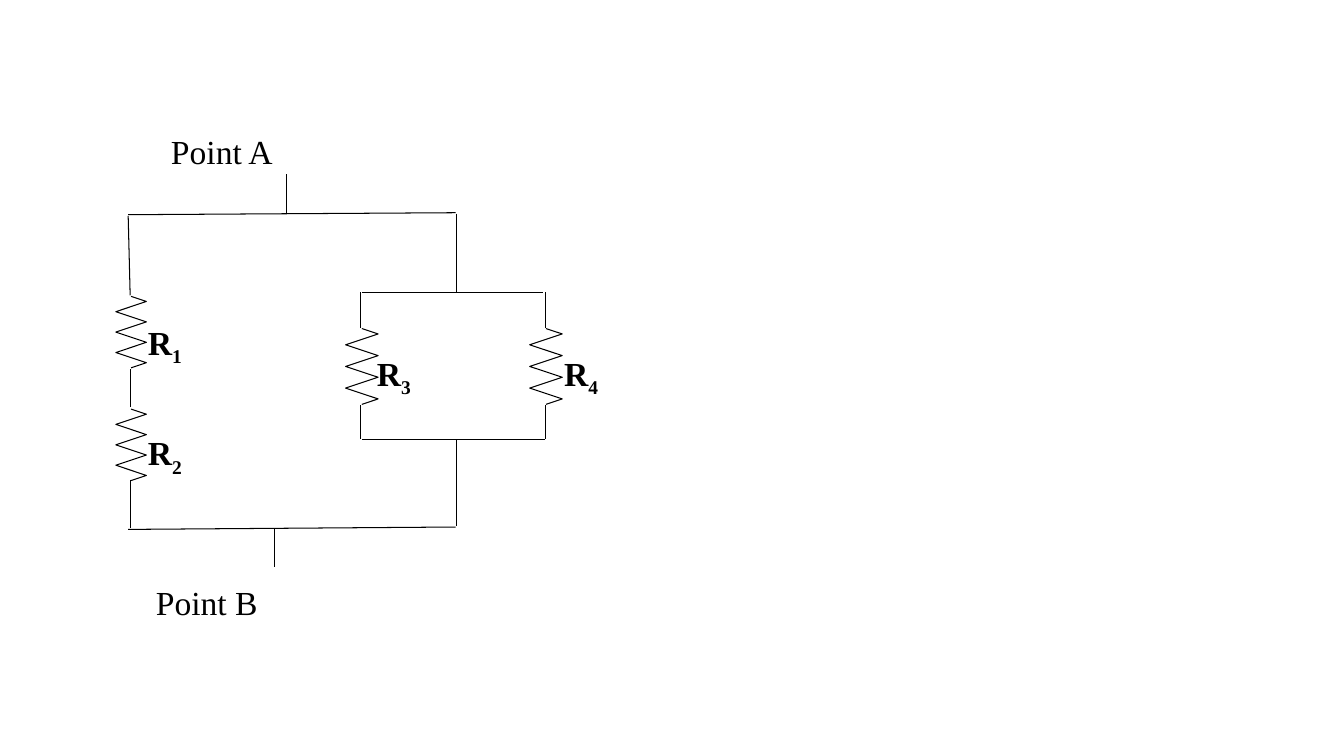
from dataclasses import dataclass

from lxml.etree import SubElement
from pptx import Presentation
from pptx.dml.color import RGBColor
from pptx.enum.shapes import MSO_CONNECTOR, MSO_SHAPE
from pptx.enum.text import MSO_ANCHOR, PP_ALIGN
from pptx.oxml.ns import qn
from pptx.slide import Slide
from pptx.text.text import TextFrame
from pptx.util import Cm, Pt


@dataclass(frozen=True)
class Theme:
    ink: RGBColor = RGBColor(0, 0, 0)
    paper: RGBColor = RGBColor(255, 255, 255)
    font: str = "Times New Roman"
    text_size: float = 24
    line_width: float = 0.75


@dataclass(frozen=True)
class Wire:
    start_x: float
    start_y: float
    end_x: float
    end_y: float


@dataclass(frozen=True)
class Box:
    left: float
    top: float
    width: float
    height: float


@dataclass(frozen=True)
class Resistor:
    number: str
    body: Box
    label: Box


@dataclass(frozen=True)
class Terminal:
    name: str
    box: Box


THEME = Theme()
ZIGZAG_STEPS = 14
LEFT_X, MIDDLE_X, RIGHT_X = 3.28, 9.09, 13.74
TRUNK_X = 11.51
BRANCH_TOP, BRANCH_BOTTOM = 7.37, 11.07

RESISTORS = [
    Resistor("2", Box(2.92, 10.31, 0.77, 1.8), Box(3.48, 10.77, 3.73, 1.17)),
    Resistor("1", Box(2.92, 7.47, 0.77, 1.8), Box(3.48, 7.98, 3.94, 1.6)),
    Resistor("4", Box(13.35, 8.28, 0.82, 1.91), Box(13.97, 8.76, 4.34, 1.55)),
    Resistor("3", Box(8.71, 8.28, 0.82, 1.91), Box(9.25, 8.76, 4.27, 1.4)),
]
TERMINALS = [
    Terminal("Point A", Box(4.06, 3.18, 6.27, 1.27)),
    Terminal("Point B", Box(3.68, 14.55, 6.27, 1.27)),
]
BRANCH_WIRES = [
    Wire(x, start_y, x, end_y)
    for x in (MIDDLE_X, RIGHT_X)
    for start_y, end_y in ((8.26, BRANCH_TOP), (10.21, BRANCH_BOTTOM))
]
WIRES = [
    Wire(7.21, 4.39, 7.21, 5.38),
    Wire(6.91, 13.31, 6.91, 14.3),
    Wire(LEFT_X, 12.09, LEFT_X, 13.31),
    Wire(LEFT_X, 7.44, 3.23, 5.44),
    Wire(LEFT_X, 9.3, LEFT_X, 10.26),
    Wire(3.23, 13.34, 11.48, 13.28),
    *BRANCH_WIRES,
    Wire(TRUNK_X, 5.38, TRUNK_X, BRANCH_TOP),
    Wire(TRUNK_X, 13.26, TRUNK_X, BRANCH_BOTTOM),
    Wire(9.12, BRANCH_TOP, 13.69, BRANCH_TOP),
    Wire(RIGHT_X, BRANCH_BOTTOM, 9.12, BRANCH_BOTTOM),
    Wire(3.23, 5.41, 11.48, 5.36),
]


def place(box: Box) -> tuple[Cm, Cm, Cm, Cm]:
    return Cm(box.left), Cm(box.top), Cm(box.width), Cm(box.height)


def write_text(frame: TextFrame, text: str, *, subscript: str = "", bold: bool = False) -> None:
    frame.word_wrap = True
    frame.vertical_anchor = MSO_ANCHOR.TOP
    paragraph = frame.paragraphs[0]
    paragraph.alignment = PP_ALIGN.LEFT
    for content, baseline in ((text, 0), (subscript, -25000)):
        if not content:
            continue
        run = paragraph.add_run()
        run.text = content
        run.font.name = THEME.font
        run.font.size = Pt(THEME.text_size)
        run.font.bold = bold
        run.font.color.rgb = THEME.ink
        if baseline:
            run.font._element.set("baseline", str(baseline))


def draw_label(slide: Slide, resistor: Resistor) -> None:
    shape = slide.shapes.add_shape(MSO_SHAPE.RECTANGLE, *place(resistor.label))
    shape.shadow.inherit = False
    shape.fill.solid()
    shape.fill.fore_color.rgb = THEME.paper
    shape.line.fill.background()
    write_text(shape.text_frame, "R", subscript=resistor.number, bold=True)


def draw_zigzag(slide: Slide, body: Box) -> None:
    center = body.left + body.width / 2
    corners = [
        (body.left + body.width * ((step // 2 + 1) % 2),
         body.top + body.height * step / ZIGZAG_STEPS)
        for step in range(1, ZIGZAG_STEPS, 2)
    ]
    corners.append((center, body.top + body.height))
    builder = slide.shapes.build_freeform(Cm(center), Cm(body.top))
    builder.add_line_segments([(Cm(x), Cm(y)) for x, y in corners], close=False)
    shape = builder.convert_to_shape()
    shape.shadow.inherit = False
    shape.fill.background()
    shape.line.color.rgb = THEME.ink
    shape.line.width = Pt(THEME.line_width)


def draw_wire(slide: Slide, wire: Wire) -> None:
    connector = slide.shapes.add_connector(
        MSO_CONNECTOR.STRAIGHT,
        Cm(wire.start_x), Cm(wire.start_y), Cm(wire.end_x), Cm(wire.end_y),
    )
    connector.line.color.rgb = THEME.ink
    connector.line.width = Pt(THEME.line_width)
    SubElement(connector._element.spPr, qn("a:effectLst"))


def draw_terminal(slide: Slide, terminal: Terminal) -> None:
    shape = slide.shapes.add_textbox(*place(terminal.box))
    write_text(shape.text_frame, terminal.name)


def main() -> None:
    presentation = Presentation()
    presentation.slide_width = Cm(33.87)
    presentation.slide_height = Cm(19.05)
    slide = presentation.slides.add_slide(presentation.slide_layouts[6])
    for resistor in RESISTORS:
        draw_label(slide, resistor)
    for resistor in RESISTORS:
        draw_zigzag(slide, resistor.body)
    for wire in WIRES:
        draw_wire(slide, wire)
    for terminal in TERMINALS:
        draw_terminal(slide, terminal)
    presentation.save("out.pptx")


if __name__ == "__main__":
    main()
